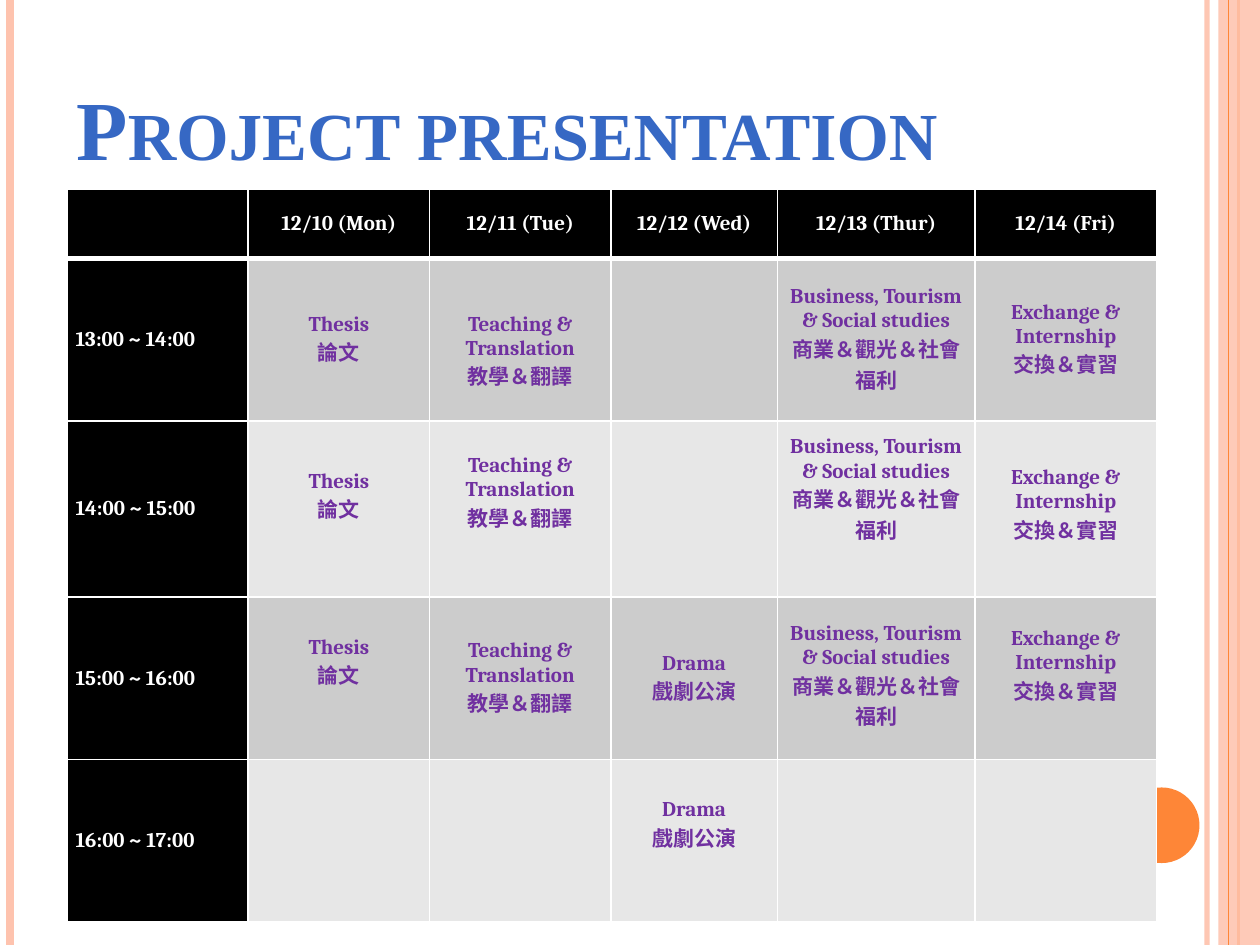
from lxml import etree
from pptx import Presentation
from pptx.dml.color import RGBColor
from pptx.enum.shapes import MSO_CONNECTOR, MSO_SHAPE
from pptx.enum.text import MSO_ANCHOR, PP_ALIGN
from pptx.oxml.ns import qn
from pptx.util import Inches, Pt

STRAIGHT = MSO_CONNECTOR.STRAIGHT
RECTANGLE, OVAL = MSO_SHAPE.RECTANGLE, MSO_SHAPE.OVAL
MIDDLE, BOTTOM = MSO_ANCHOR.MIDDLE, MSO_ANCHOR.BOTTOM
LEFT, CENTER = PP_ALIGN.LEFT, PP_ALIGN.CENTER

THEME = {
    "peach": "FEC3AE", "orange": "FE8637", "title": "3668C4",
    "head": "000000", "bands": ("CCCCCC", "E7E7E7"),
    "light": "FFFFFF", "entry": "7030A0",
    "title_font": "Times New Roman", "table_font": "Cambria",
    "title_size": 48, "table_size": 12,
}


def add_run(paragraph, text, font, size, color):
    run = paragraph.add_run()
    run.text = text
    run.font.name = font
    run.font.size = Pt(size)
    run.font.bold = True
    run.font.color.rgb = RGBColor.from_string(color)
    return run


def set_alpha(element, percent):
    color = element.find(".//" + qn("a:srgbClr"))
    etree.SubElement(color, qn("a:alpha")).set("val", str(percent * 1000))


presentation = Presentation()
presentation.slide_width = Inches(10)
presentation.slide_height = Inches(7.5)
slide = presentation.slides.add_slide(presentation.slide_layouts[6])
shapes = slide.shapes

stripes = [
    (9.58, "peach", 3, 93),
    (0.08, "peach", 4.5, 100),
    (9.83, "orange", 1.5, 100),
    (9.75, "orange", 0.75, 100),
]
for index, (x, color, width, alpha) in enumerate(stripes):
    if index == 3:
        band = shapes.add_shape(RECTANGLE, Inches(9.67), 0, Inches(0.33), Inches(7.5))
        band.shadow.inherit = False
        band.fill.solid()
        band.fill.fore_color.rgb = RGBColor.from_string(THEME["peach"])
        band.line.fill.background()
        set_alpha(band.fill._xPr, 87)
    stripe = shapes.add_connector(STRAIGHT, Inches(x), 0, Inches(x), Inches(7.5))
    stripe.line.color.rgb = RGBColor.from_string(THEME[color])
    stripe.line.width = Pt(width)
    properties = stripe._element.spPr
    etree.SubElement(properties, qn("a:effectLst"))
    if alpha < 100:
        set_alpha(properties, alpha)

circle = shapes.add_shape(OVAL, Inches(8.92), Inches(6.25), Inches(0.6), Inches(0.6))
circle.shadow.inherit = False
circle.fill.solid()
circle.fill.fore_color.rgb = RGBColor.from_string(THEME["orange"])
circle.line.fill.background()

title = shapes.add_textbox(Inches(0.51), Inches(0.55), Inches(9), Inches(0.91))
title.text_frame.word_wrap = True
title.text_frame.vertical_anchor = MIDDLE
title_run = add_run(title.text_frame.paragraphs[0], "Project presentation",
                    THEME["title_font"], THEME["title_size"], THEME["title"])
title_run.font._element.set("cap", "small")

thesis = ("Thesis", "論文")
teaching = ("Teaching &", "Translation", "教學＆翻譯")
drama = ("Drama", "戲劇公演")
business = ("Business, Tourism & Social studies", "商業＆觀光＆社會福利")
exchange = ("Exchange & Internship", "交換＆實習")
empty = ()

rows = [
    (empty, ("12/10 (Mon)",), ("12/11 (Tue)",), ("12/12 (Wed)",),
     ("12/13 (Thur)",), ("12/14 (Fri)",)),
    (("13:00 ~ 14:00",), thesis, teaching, empty, business, exchange),
    (("14:00 ~ 15:00",), thesis, teaching, empty, business, exchange),
    (("15:00 ~ 16:00",), thesis, teaching, drama, business, exchange),
    (("16:00 ~ 17:00",), empty, empty, drama, empty, empty),
]
placements = {
    (1, 2): (MIDDLE, 0.19, 0),
    (2, 1): (MIDDLE, 0, 0.2),
    (2, 2): (MIDDLE, 0, 0.25),
    (2, 4): (BOTTOM, 0, 0.42),
    (2, 5): (BOTTOM, 0, 0.42),
    (3, 1): (MIDDLE, 0, 0.25),
    (3, 4): (BOTTOM, 0, 0.23),
    (3, 5): (BOTTOM, 0, 0.43),
    (4, 3): (MIDDLE, 0, 0.25),
}
column_widths = [1.44, 1.44, 1.44, 1.32, 1.57, 1.44]
row_heights = [0.55, 1.29, 1.4, 1.29, 1.29]

table = shapes.add_table(len(rows), len(column_widths), Inches(0.53), Inches(1.5),
                         Inches(sum(column_widths)), Inches(sum(row_heights))).table
for column, width in zip(table.columns, column_widths):
    column.width = Inches(width)
for row, height in zip(table.rows, row_heights):
    row.height = Inches(height)

for row_index, row in enumerate(rows):
    for column_index, lines in enumerate(row):
        cell = table.cell(row_index, column_index)
        is_head = row_index == 0 or column_index == 0
        fill = THEME["head"] if is_head else THEME["bands"][(row_index - 1) % 2]
        cell.fill.solid()
        cell.fill.fore_color.rgb = RGBColor.from_string(fill)
        anchor, top, bottom = placements.get((row_index, column_index), (MIDDLE, 0, 0))
        cell.vertical_anchor = anchor
        cell.margin_left = cell.margin_right = Inches(0.07)
        cell.margin_top, cell.margin_bottom = Inches(top), Inches(bottom)

        frame = cell.text_frame
        for line_index, text in enumerate(lines):
            paragraph = frame.add_paragraph() if line_index else frame.paragraphs[0]
            paragraph.alignment = LEFT if column_index == 0 else CENTER
            add_run(paragraph, text, THEME["table_font"], THEME["table_size"],
                    THEME["light"] if is_head else THEME["entry"])

        cell_properties = cell._tc.get_or_add_tcPr()
        for position, side in enumerate(("lnL", "lnR", "lnT", "lnB")):
            below_header = (row_index, side) in ((0, "lnB"), (1, "lnT"))
            border = etree.Element(qn("a:" + side), w=str(Pt(3 if below_header else 1)))
            border_fill = etree.SubElement(border, qn("a:solidFill"))
            etree.SubElement(border_fill, qn("a:srgbClr"), val=THEME["light"])
            cell_properties.insert(position, border)

presentation.save("out.pptx")
